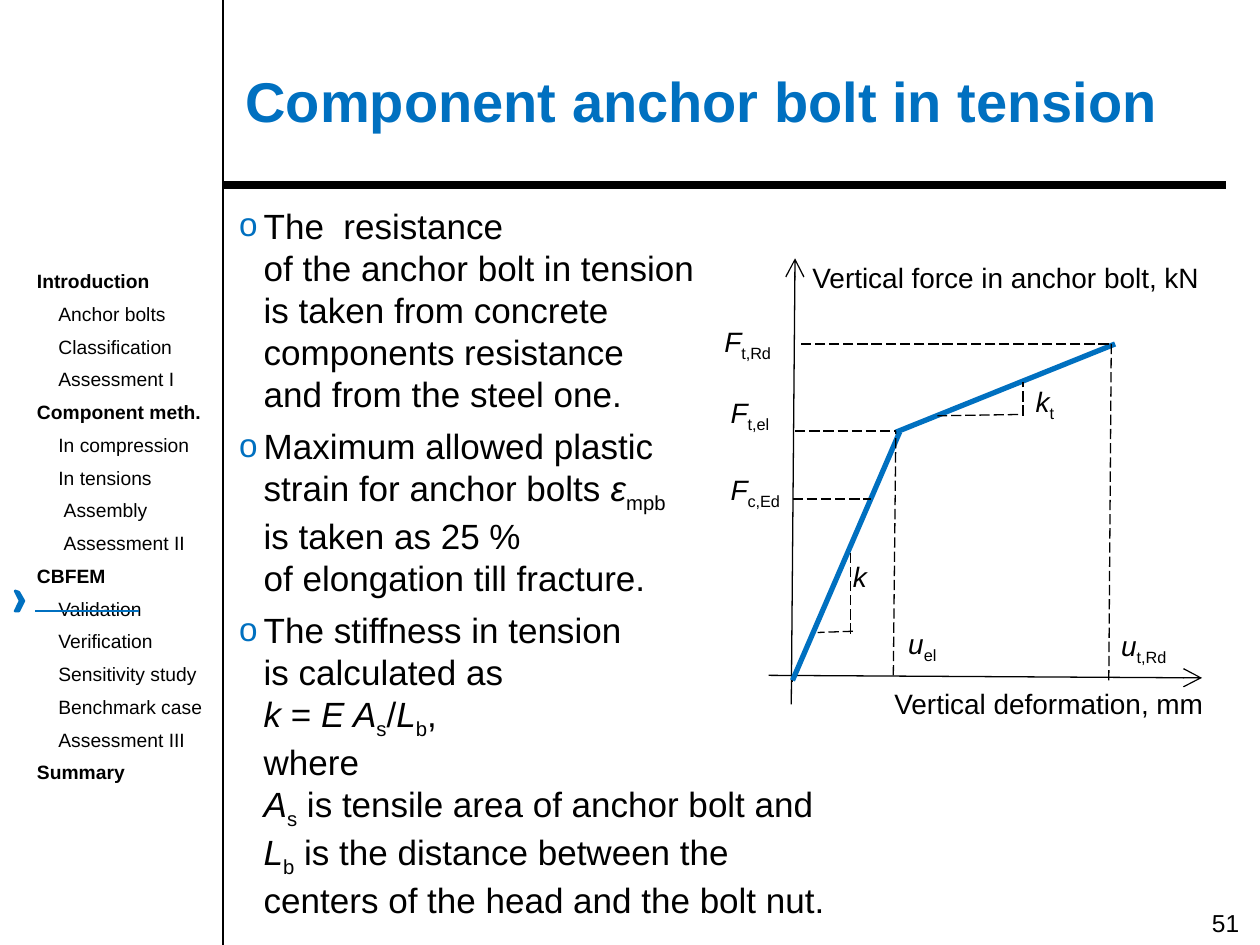
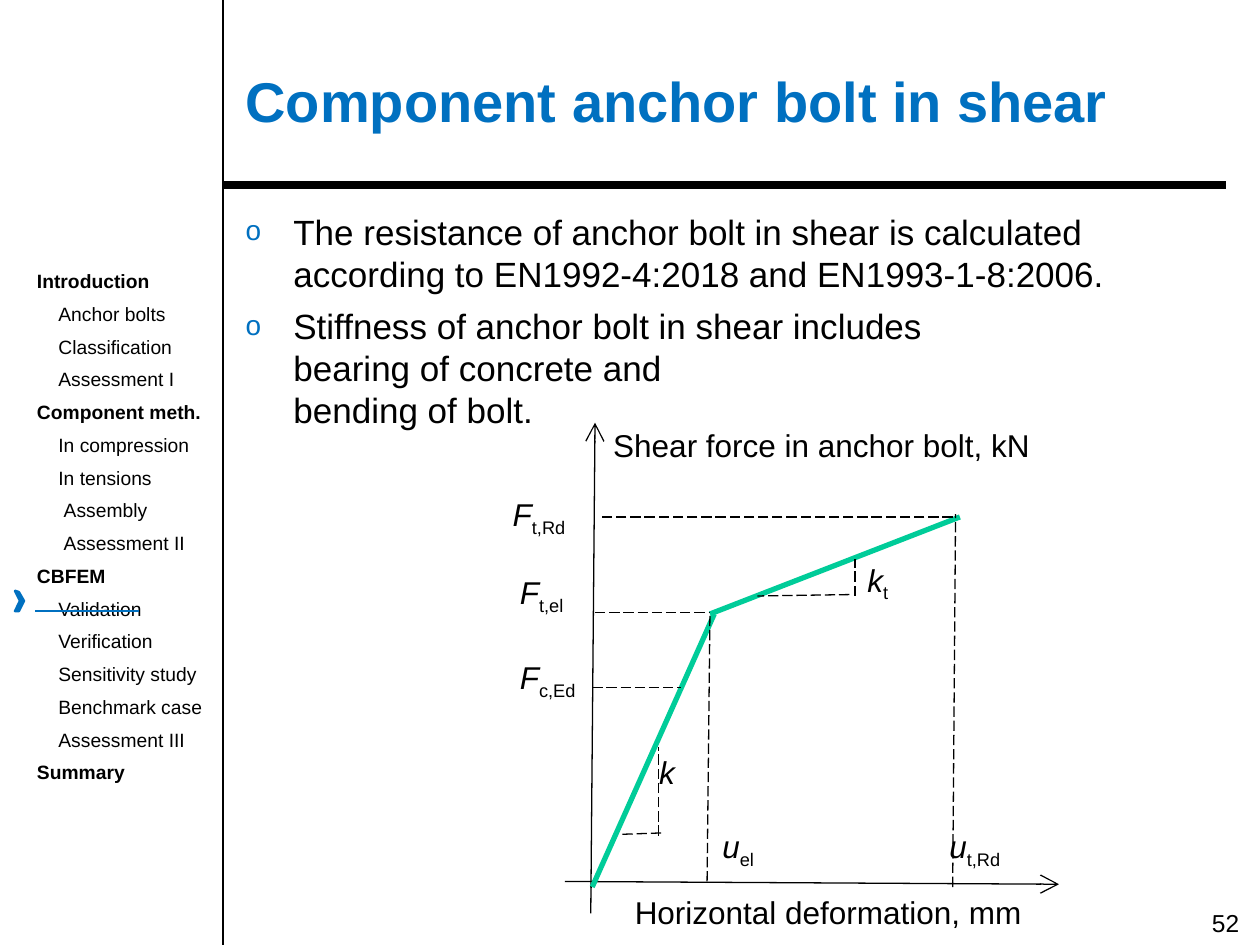
from typing import NamedTuple

from lxml import etree
from pptx import Presentation
from pptx import util as u
from pptx.dml.color import RGBColor
from pptx.enum import dml, shapes, text
from pptx.oxml.ns import qn

COLORS = {"ink": "000000", "accent": "0070C0", "shear": "00CC99"}
FONT = "Arial"
COLUMNS, ROWS = 100, 75
CELL = u.Inches(0.1)

MENU = [
    ("Introduction", 0), ("Anchor bolts", 1), ("Classification", 1), ("Assessment I", 1),
    ("Component meth.", 0), ("In compression", 1), ("In tensions", 1), ("Assembly", 1.25),
    ("Assessment II", 1.25), ("CBFEM", 0), ("Validation", 1), ("Verification", 1),
    ("Sensitivity study", 1), ("Benchmark case", 1), ("Assessment III", 1), ("Summary", 0),
]
MENU_INDENT = 1.7
CHEVRON = [(1.2, 46.9), (1.5, 47), (1.9, 47.7), (1.5, 48.5), (1.2, 48.5), (1.6, 47.7)]


class Box(NamedTuple):
    """Columns and rows of the slide grid."""
    left: float
    top: float
    width: float
    height: float


class Line(NamedTuple):
    x1: float
    y1: float
    x2: float
    y2: float


class Style(NamedTuple):
    width: float = 0.75
    color: str = "ink"
    dashed: bool = False
    arrow: bool = False
    kind: shapes.MSO_CONNECTOR = shapes.MSO_CONNECTOR.STRAIGHT


class Label(NamedTuple):
    markup: str
    box: Box


class Diagram(NamedTuple):
    """Force-deformation curve, stretched from its origin on the slide grid."""
    origin_x: float
    origin_y: float
    stretch_x: float
    stretch_y: float
    size: float
    curve_color: str
    labels: list[Label]


class Page(NamedTuple):
    number: int
    title: str
    body: Box
    hanging: float
    bullet_percent: int
    bullets: list[str]
    diagram: Diagram


# Diagram parts are measured in cells from the origin of the axes.
AXES = [Line(-0.1, 1.9, 0.2, -33.5), Line(-1.9, -0.4, 32.5, -0.2)]
ORIGIN_MARK = [Line(-0.1, -0.1, 0, 0)]
CURVE = [Line(0, 0, 8.5, -19.7), Line(25.6, -26.7, 8.2, -19.7)]
GUIDES = [
    Line(25.1, 0, 25.3, -26.9), Line(25.1, -26.7, 0.6, -26.7),
    Line(8, -0.4, 8.2, -19.8), Line(0.2, -19.8, 8.2, -19.8),
    Line(0, -14.4, 6.2, -14.4),
    Line(4.6, -3.7, 4.6, -10.1), Line(4.8, -3.9, 2, -3.8),
    Line(17.9, -21.1, 11.5, -21), Line(18.3, -21, 18.3, -23.7),
]
SHARED_LABELS = [
    Label("*u*_el_", Box(8.2, -4.8, 6.9, 5.4)),
    Label("*F*_t,Rd_", Box(-6.4, -28.7, 8.5, 5)),
    Label("*F*_t,el_", Box(-5.9, -23.1, 8.4, 5.1)),
    Label("*F*_c,Ed_", Box(-5.9, -17, 7.9, 5.4)),
    Label("*k*", Box(3.8, -10.1, 3.1, 4.7)),
    Label("*k*_t_", Box(18.3, -24, 6.2, 6.1)),
]

PAGES = [
    Page(
        51, "Component anchor bolt in tension", Box(18, 15.7, 49.7, 58), 1.95, 95,
        ["The  resistance\nof the anchor bolt in tension\nis taken from concrete\n"
         "components resistance\nand from the steel one.",
         "Maximum allowed plastic\nstrain for anchor bolts *ε*_mpb_\nis taken as 25 %\n"
         "of elongation till fracture.",
         "The stiffness in tension\nis calculated as\n*k* = *E A*_s_/*L*_b_,\nwhere\n"
         "*A*_s_ is tensile area of anchor bolt and\n"
         "*L*_b_ is the distance between the centers of the head and the bolt nut."],
        Diagram(62.9, 54, 1, 1, 16, "accent", [
            Label("Vertical force in anchor bolt, kN", Box(0.6, -33.8, 36.3, 5.1)),
            Label("Vertical deformation, mm", Box(7.1, 0, 28.5, 4.4)),
            Label("*u*_t,Rd_", Box(25.1, -4.6, 7.7, 5.8)),
        ]),
    ),
    Page(
        52, "Component anchor bolt in shear", Box(18.5, 16.2, 81.5, 28.4), 3.8, 80,
        ["The resistance of anchor bolt in shear is calculated\n"
         "according to EN1992-4:2018 and EN1993-1-8:2006.",
         "Stiffness of anchor bolt in shear includes\nbearing of concrete and\nbending of bolt."],
        Diagram(47, 70.4, 1.14, 1.1, 18, "shear", [
            Label("Shear force in anchor bolt, kN", Box(0.6, -33.7, 33.8, 5.1)),
            Label("Horizontal deformation, mm", Box(2.1, 0, 32.3, 4.4)),
            Label("*u*_t,Rd_", Box(24, -4.8, 7.7, 5.8)),
        ]),
    ),
]


def cells(count: float) -> u.Emu:
    return u.Emu(round(count * CELL))


def rgb(name: str) -> RGBColor:
    return RGBColor.from_string(COLORS[name])


def format_run(run, size: float, color: str = "ink", bold: bool = False) -> None:
    run.font.name = FONT
    run.font.size = u.Pt(size)
    run.font.bold = bold
    run.font.color.rgb = rgb(color)


def write_markup(paragraph, markup: str, size: float) -> None:
    """Write *italic* and _subscript_ parts, with line breaks at newlines."""
    for line_index, line in enumerate(markup.split("\n")):
        if line_index:
            paragraph.add_line_break()
        for italic_index, part in enumerate(line.split("*")):
            for sub_index, piece in enumerate(part.split("_")):
                if not piece:
                    continue
                run = paragraph.add_run()
                run.text = piece
                format_run(run, size)
                run.font.italic = italic_index % 2 == 1
                if sub_index % 2:
                    run._r.get_or_add_rPr().set("baseline", "-25000")


def add_frame(slide, box: Box):
    frame = slide.shapes.add_textbox(*map(cells, box)).text_frame
    frame.word_wrap = True
    return frame


def add_line(slide, line: Line, style: Style) -> None:
    connector = slide.shapes.add_connector(style.kind, *map(cells, line))
    connector.line.width = u.Pt(style.width)
    connector.line.color.rgb = rgb(style.color)
    if style.dashed:
        connector.line.dash_style = dml.MSO_LINE.LONG_DASH
    properties = connector._element.spPr
    if style.arrow:
        etree.SubElement(properties.find(qn("a:ln")), qn("a:tailEnd"),
                         type="arrow", w="lg", len="lg")
    etree.SubElement(properties, qn("a:effectLst"))


def set_bullet(paragraph, hanging: float, percent: int) -> None:
    properties = paragraph._p.get_or_add_pPr()
    properties.set("marL", str(cells(hanging)))
    properties.set("indent", str(-cells(hanging)))
    color = etree.SubElement(properties, qn("a:buClr"))
    etree.SubElement(color, qn("a:srgbClr"), val=COLORS["accent"])
    etree.SubElement(properties, qn("a:buSzPct"), val=str(percent * 1000))
    etree.SubElement(properties, qn("a:buFont"), typeface=FONT)
    etree.SubElement(properties, qn("a:buChar"), char="o")


def add_menu(slide) -> None:
    frame = add_frame(slide, Box(1.95, 20.9, 16.1, 45.4))
    frame.text = "\n".join(name for name, _ in MENU)
    for index, (paragraph, (_, level)) in enumerate(zip(frame.paragraphs, MENU)):
        paragraph._p.get_or_add_pPr().set("marL", str(cells(level * MENU_INDENT)))
        if index:
            paragraph.space_before = u.Pt(5.5)
        format_run(paragraph.runs[0], 11, bold=level == 0)


def add_menu_marker(slide) -> None:
    """Chevron and rule at the current menu entry."""
    points = [(cells(x), cells(y)) for x, y in CHEVRON]
    builder = slide.shapes.build_freeform(*points[0])
    builder.add_line_segments(points[1:], close=True)
    chevron = builder.convert_to_shape()
    chevron.shadow.inherit = False
    chevron.fill.solid()
    chevron.fill.fore_color.rgb = rgb("accent")
    chevron.line.color.rgb = rgb("accent")
    chevron.line.width = u.Pt(1.5)
    add_line(slide, Line(2.8, 48.5, 11, 48.5), Style(1.5, "accent"))


def add_page_frame(slide, page: Page) -> None:
    """Rules, menu, page number and title."""
    add_line(slide, Line(17.7, ROWS, 17.7, 0), Style())
    add_line(slide, Line(17.7, 14.7, 97.3, 14.7), Style(4.5))
    add_menu(slide)
    number = add_frame(slide, Box(95.2, 71.6, 4.6, 3.4))
    number.text = str(page.number)
    format_run(number.paragraphs[0].runs[0], 14)
    title = add_frame(slide, Box(18.5, 2.9, 81.5, 10.1))
    title.vertical_anchor = text.MSO_ANCHOR.MIDDLE
    title.text = page.title
    format_run(title.paragraphs[0].runs[0], 32, "accent", bold=True)


def add_body(slide, page: Page) -> None:
    frame = add_frame(slide, page.body)
    for index, bullet in enumerate(page.bullets):
        paragraph = frame.add_paragraph() if index else frame.paragraphs[0]
        set_bullet(paragraph, page.hanging, page.bullet_percent)
        if index:
            paragraph.space_before = u.Pt(6)
        write_markup(paragraph, bullet, 20)


def add_diagram(slide, diagram: Diagram) -> None:
    def place_x(x: float) -> float:
        return diagram.origin_x + x * diagram.stretch_x

    def place_y(y: float) -> float:
        return diagram.origin_y + y * diagram.stretch_y

    groups = [
        (AXES, Style(arrow=True)),
        (ORIGIN_MARK, Style(1.5, kind=shapes.MSO_CONNECTOR.ELBOW)),
        (CURVE, Style(3, diagram.curve_color)),
        (GUIDES, Style(dashed=True)),
    ]
    for lines, style in groups:
        for x1, y1, x2, y2 in lines:
            add_line(slide, Line(place_x(x1), place_y(y1), place_x(x2), place_y(y2)), style)
    for label in diagram.labels + SHARED_LABELS:
        left, top, width, height = label.box
        box = Box(place_x(left), place_y(top),
                  width * diagram.stretch_x, height * diagram.stretch_y)
        write_markup(add_frame(slide, box).paragraphs[0], label.markup, diagram.size)


def main() -> None:
    presentation = Presentation()
    presentation.slide_width = cells(COLUMNS)
    presentation.slide_height = cells(ROWS)
    for page in PAGES:
        slide = presentation.slides.add_slide(presentation.slide_layouts[6])
        add_page_frame(slide, page)
        add_body(slide, page)
        add_diagram(slide, page.diagram)
        add_menu_marker(slide)
    presentation.save("out.pptx")


if __name__ == "__main__":
    main()
